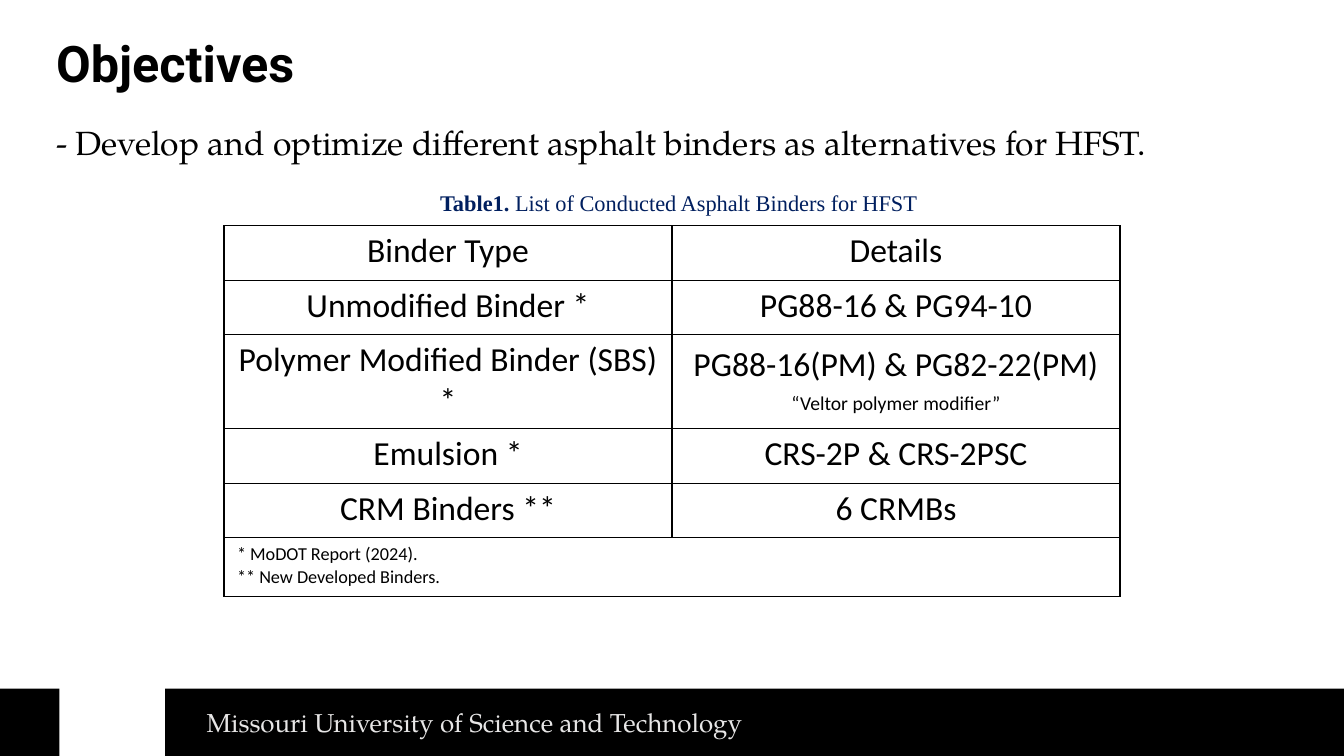
from dataclasses import dataclass
from lxml import etree
from pptx import Presentation
from pptx.dml.color import RGBColor
from pptx.enum.shapes import MSO_SHAPE
from pptx.enum.text import MSO_ANCHOR, MSO_AUTO_SIZE, PP_ALIGN
from pptx.oxml.ns import qn
from pptx.util import Inches, Pt

RECT = MSO_SHAPE.RECTANGLE
TOP = MSO_ANCHOR.TOP
FIXED = MSO_AUTO_SIZE.NONE
LEFT, CENTER = PP_ALIGN.LEFT, PP_ALIGN.CENTER


@dataclass(frozen=True)
class Style:
    name: str
    size: float
    color: str
    bold: bool = False


class Theme:
    ink = "000000"
    title = Style("Roboto", 36, ink, True)
    body = Style("TeX Gyre Pagella", 24, ink)
    footer = Style("TeX Gyre Pagella", 18.5, "E7E6E6")
    label = Style("Times New Roman", 16, "001F5F", True)
    caption = Style("Times New Roman", 16, "001F5F")
    cell = Style("Calibri", 24, ink)
    detail = Style("Calibri", 14, ink)
    note = Style("Calibri", 13, ink)
    border = Pt(1)


class Deck:
    def __init__(self, theme):
        self.theme = theme
        self.file = Presentation()
        self.file.slide_width = Inches(13.33)
        self.file.slide_height = Inches(7.5)
        self.col = self.file.slide_width / 24
        self.row = self.file.slide_height / 24
        self.slide = self.file.slides.add_slide(self.file.slide_layouts[1])

    def area(self, x, y, w, h):
        return [int(n * unit) for n, unit in
                zip((x, y, w, h), (self.col, self.row) * 2)]

    def font(self, font, style):
        font.name = style.name
        font.size = Pt(style.size)
        font.bold = style.bold
        font.color.rgb = RGBColor.from_string(style.color)

    def line(self, para, text, style, align=LEFT):
        para.text = text
        para.alignment = align
        para.space_before = Pt(0)
        self.font(para.font, style)

    def frame(self, shape):
        frame = shape.text_frame
        frame.word_wrap = True
        frame.auto_size = FIXED
        frame.vertical_anchor = TOP
        frame.margin_left = frame.margin_right = frame.margin_bottom = 0
        frame.margin_top = Inches(0.01)
        return frame.paragraphs[0]

    def holder(self, index, area, text, style):
        shape = self.slide.placeholders[index]
        shape.left, shape.top, shape.width, shape.height = self.area(*area)
        para = self.frame(shape)
        props = para._p.get_or_add_pPr()
        props.set("marL", "0")
        props.set("indent", "0")
        etree.SubElement(props, qn("a:buNone"))
        self.line(para, text, style)

    def label(self, area, text, style):
        para = self.frame(self.slide.shapes.add_textbox(*self.area(*area)))
        self.line(para, text, style)
        return para

    def caption(self, area, lead, text):
        para = self.label(area, lead, self.theme.label)
        self.font(para.runs[0].font, self.theme.label)
        run = para.add_run()
        run.text = text
        self.font(run.font, self.theme.caption)

    def bar(self, area):
        shape = self.slide.shapes.add_shape(RECT, *self.area(*area))
        shape.shadow.inherit = False
        shape.fill.solid()
        shape.fill.fore_color.rgb = RGBColor.from_string(self.theme.ink)
        shape.line.fill.background()

    def outline(self, cell):
        cell.fill.background()
        props = cell._tc.get_or_add_tcPr()
        for spot, side in enumerate(("lnL", "lnR", "lnT", "lnB")):
            edge = etree.Element(qn(f"a:{side}"), w=str(self.theme.border))
            fill = etree.SubElement(edge, qn("a:solidFill"))
            etree.SubElement(fill, qn("a:srgbClr"), val=self.theme.ink)
            props.insert(spot, edge)

    def fill(self, cell, lines, top=0.05, left=0, align=CENTER):
        cell.margin_left = Inches(left)
        cell.margin_top = Inches(top)
        cell.margin_right = cell.margin_bottom = 0
        cell.vertical_anchor = TOP
        for spot, (text, style) in enumerate(lines):
            frame = cell.text_frame
            para = frame.add_paragraph() if spot else frame.paragraphs[0]
            self.line(para, text, style, align)

    def table(self, x, y, width, heights, rows, notes):
        area = self.area(x, y, width, sum(heights))
        grid = self.slide.shapes.add_table(len(heights), 2, *area).table
        grid.first_row = grid.horz_banding = False
        for row, height in zip(grid.rows, heights):
            row.height = int(height * self.row)
        for cell in grid.iter_cells():
            self.outline(cell)
        for r, row in enumerate(rows):
            for c, lines in enumerate(row):
                self.fill(grid.cell(r, c),
                          [(text, self.theme.cell) for text in lines])
        last = len(rows)
        grid.cell(last, 0).merge(grid.cell(last, 1))
        self.fill(grid.cell(last, 0),
                  [(text, self.theme.note) for text in notes],
                  top=0.06, left=0.13, align=LEFT)
        return grid

    def remark(self, cell, text):
        cell.margin_top = Inches(0.1)
        para = cell.text_frame.add_paragraph()
        self.line(para, text, self.theme.detail, CENTER)
        para.space_before = Pt(4.3)


def main():
    theme = Theme()
    deck = Deck(theme)
    for x, width in ((0, 1.06), (2.95, 21.05)):
        deck.bar((x, 21.86, width, 2.14))
    deck.holder(0, (1, 1, 12, 2), "Objectives", theme.title)
    deck.label((3.69, 22.4, 10, 1.09),
               "Missouri University of Science and Technology", theme.footer)
    deck.holder(1, (1, 3.84, 20, 1.38),
                "- Develop and optimize different asphalt binders "
                "as alternatives for HFST.", theme.body)
    rows = (
        (["Binder Type"], ["Details"]),
        (["Unmodified Binder *"], ["PG88-16 & PG94-10"]),
        (["Polymer Modified Binder (SBS)", "*"],
         ["PG88-16(PM) & PG82-22(PM)"]),
        (["Emulsion *"], ["CRS-2P & CRS-2PSC"]),
        (["CRM Binders **"], ["6 CRMBs"]),
    )
    notes = ("* MoDOT Report (2024).", "** New Developed Binders.")
    grid = deck.table(4, 7.17, 16, (1.73, 1.73, 2.98, 1.73, 1.73, 1.86),
                      rows, notes)
    deck.remark(grid.cell(2, 1), "“Veltor polymer modifier”")
    deck.caption((7.86, 5.98, 9, 0.93), "Table1. ",
                 "List of Conducted Asphalt Binders for HFST")
    deck.file.save("out.pptx")


if __name__ == "__main__":
    main()
